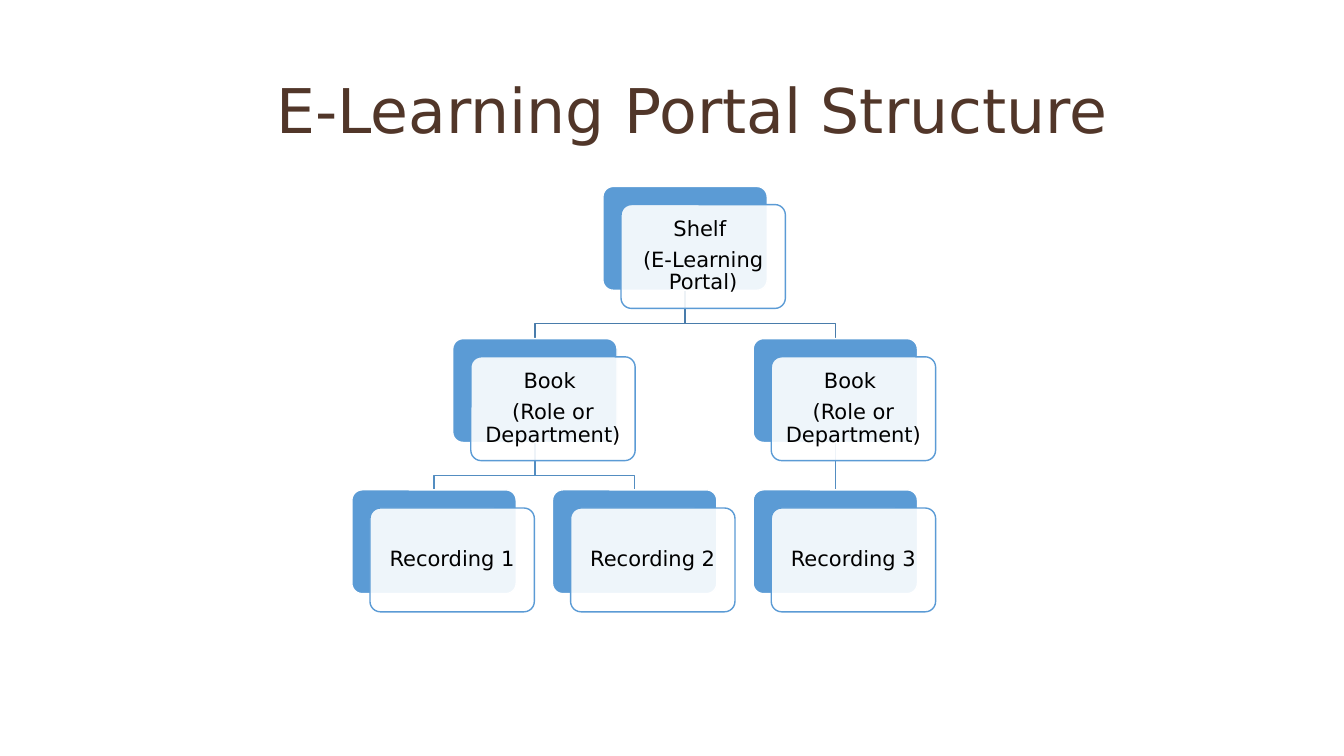
from lxml import etree
from pptx import Presentation
from pptx.dml.color import RGBColor
from pptx.enum.shapes import MSO_CONNECTOR, MSO_SHAPE
from pptx.enum.text import MSO_ANCHOR, PP_ALIGN
from pptx.oxml.ns import qn
from pptx.util import Inches, Pt

ROUNDED = MSO_SHAPE.ROUNDED_RECTANGLE
STRAIGHT = MSO_CONNECTOR.STRAIGHT
CENTER = PP_ALIGN.CENTER
MIDDLE = MSO_ANCHOR.MIDDLE

BROWN = RGBColor(0x51, 0x36, 0x29)
BLUE = RGBColor(0x5B, 0x9B, 0xD5)
SHELF_LINK = RGBColor(0x49, 0x7C, 0xAB)
BOOK_LINK = RGBColor(0x53, 0x8D, 0xC1)
WHITE = RGBColor(0xFF, 0xFF, 0xFF)
BLACK = RGBColor(0, 0, 0)

FONT = "DejaVu Sans"
CARD_W, CARD_H = 1.63, 1.03
FRONT_SHIFT = 0.18
BEND_DROP = 0.33  # from a card's bottom to the bend of its link
ROW_TOPS = [1.85, 3.36, 4.86]

# key: (left, row, lines of text)
NODES = {
    "shelf": (5.98, 0, ["Shelf ", "(E-Learning Portal)"]),
    "book 1": (4.49, 1, ["Book ", "(Role or Department)"]),
    "recording 1": (3.49, 2, ["Recording 1"]),
    "recording 2": (5.48, 2, ["Recording 2"]),
    "book 2": (7.47, 1, ["Book ", "(Role or Department)"]),
    "recording 3": (7.47, 2, ["Recording 3"]),
}
LINKS = [
    ("book 2", "recording 3"),
    ("shelf", "book 2"),
    ("book 1", "recording 2"),
    ("book 1", "recording 1"),
    ("shelf", "book 1"),
]


def add_card(left, top, fill, outline):
    card = slide.shapes.add_shape(
        ROUNDED, Inches(left), Inches(top), Inches(CARD_W), Inches(CARD_H))
    card.adjustments[0] = 0.1
    card.shadow.inherit = False
    card.fill.solid()
    card.fill.fore_color.rgb = fill
    card.line.color.rgb = outline
    card.line.width = Pt(1)
    return card


prs = Presentation()
prs.slide_width, prs.slide_height = Inches(13.33), Inches(7.5)
slide = prs.slides.add_slide(prs.slide_layouts[5])

title = slide.shapes.title
title.left, title.top = Inches(1.33), Inches(0.4)
title.width, title.height = Inches(11.08), Inches(1.45)
title.text_frame.text = "E-Learning Portal Structure"
title.text_frame.vertical_anchor = MIDDLE
heading = title.text_frame.paragraphs[0]
heading.alignment = CENTER
heading.line_spacing = 0.9
heading.font.name = FONT
heading.font.size = Pt(44)
heading.font.color.rgb = BROWN

# Links lie behind the cards; straight ones are joined once the cards exist.
straight_links = []
for parent, child in LINKS:
    parent_left, parent_row, _ = NODES[parent]
    child_left, child_row, _ = NODES[child]
    start_x = Inches(parent_left + CARD_W / 2)
    start_y = Inches(ROW_TOPS[parent_row] + CARD_H)
    end_x = Inches(child_left + CARD_W / 2)
    end_y = Inches(ROW_TOPS[child_row])
    if start_x == end_x:
        link = slide.shapes.add_connector(STRAIGHT, start_x, start_y, end_x, end_y)
        etree.SubElement(link._element.spPr, qn("a:effectLst"))
        straight_links.append((link, parent, child))
    else:
        bend_y = start_y + Inches(BEND_DROP)
        outline = slide.shapes.build_freeform(start_x, start_y)
        outline.add_line_segments(
            [(start_x, bend_y), (end_x, bend_y), (end_x, end_y)], close=False)
        link = outline.convert_to_shape()
        link.shadow.inherit = False
        link.fill.background()
    link.line.color.rgb = SHELF_LINK if parent == "shelf" else BOOK_LINK
    link.line.width = Pt(1)

back_cards = {}
for key, (left, row, lines) in NODES.items():
    top = ROW_TOPS[row]
    back_cards[key] = add_card(left, top, BLUE, WHITE)
    front = add_card(left + FRONT_SHIFT, top + FRONT_SHIFT, WHITE, BLUE)
    fill_color = front._element.spPr.find(qn("a:solidFill"))[0]
    etree.SubElement(fill_color, qn("a:alpha"), val="90000")

    frame = front.text_frame
    frame.word_wrap = True
    frame.vertical_anchor = MIDDLE
    frame.margin_left = frame.margin_right = Inches(0.06)
    frame.margin_top = frame.margin_bottom = Inches(0.06)
    frame.text = "\n".join(lines)
    for paragraph in frame.paragraphs:
        paragraph.alignment = CENTER
        paragraph.line_spacing = 0.9
        paragraph.font.name = FONT
        paragraph.font.size = Pt(15)
        paragraph.font.color.rgb = BLACK
    for paragraph in frame.paragraphs[:-1]:
        paragraph.space_after = Pt(5.5)

for link, parent, child in straight_links:
    link.begin_connect(back_cards[parent], 2)
    link.end_connect(back_cards[child], 0)

prs.save("out.pptx")
